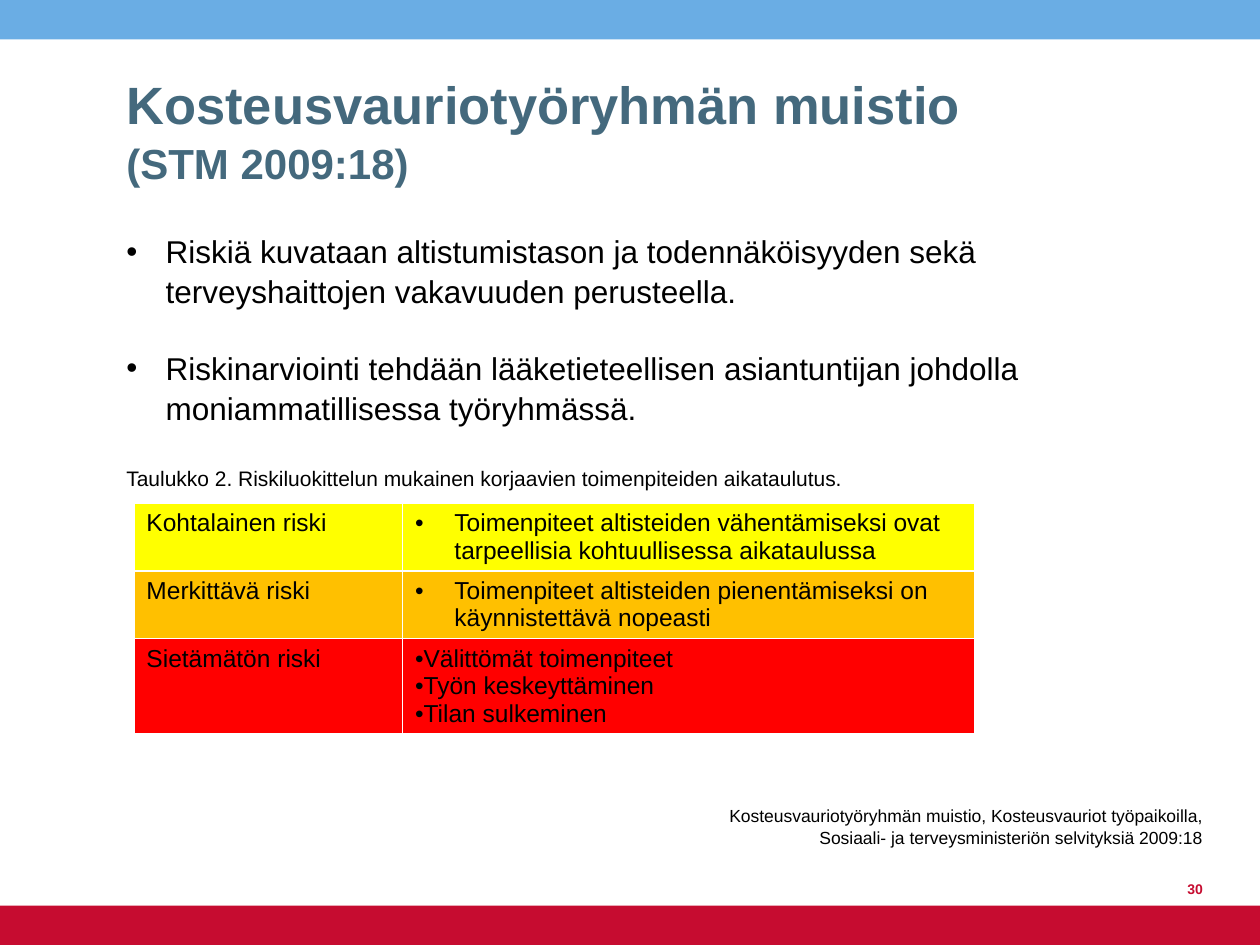
from dataclasses import dataclass

from lxml.etree import SubElement
from pptx import Presentation
from pptx.dml.color import RGBColor
from pptx.enum.shapes import MSO_SHAPE
from pptx.enum.text import MSO_ANCHOR, MSO_AUTO_SIZE, PP_ALIGN
from pptx.oxml.ns import qn
from pptx.util import Pt

COLORS = {
    "sky": "6AADE4", "crimson": "C60C30", "slate": "44697D", "black": "000000",
    "yellow": "FFFF00", "orange": "FFC000", "red": "FF0000",
}
WIDTH, HEIGHT, BAR = 720, 540, 22.5
HANG = 22.5
LINE = 1.05


@dataclass
class Risk:
    name: str
    actions: list[str]
    color: str
    height: float
    margin: float


RISKS = [
    Risk("Kohtalainen riski",
         ["Toimenpiteet altisteiden vähentämiseksi ovat tarpeellisia kohtuullisessa aikataulussa"],
         "yellow", 38.5, HANG),
    Risk("Merkittävä riski",
         ["Toimenpiteet altisteiden pienentämiseksi on käynnistettävä nopeasti"],
         "orange", 38.5, HANG),
    Risk("Sietämätön riski",
         ["Välittömät toimenpiteet", "Työn keskeyttäminen", "Tilan sulkeminen"],
         "red", 54, 0),
]


def rgb(name: str) -> RGBColor:
    return RGBColor.from_string(COLORS[name])


def add_text(tf, text: str, *, size: float, color: str = "black", bold: bool = False,
             align=PP_ALIGN.LEFT, before: float = 0, line: float = LINE,
             margin: float = 0, bullet: bool = False):
    """Fill the empty first paragraph of the frame, or append a new one."""
    p = tf.paragraphs[0] if not tf.text else tf.add_paragraph()
    p.alignment, p.line_spacing = align, line
    p.space_before, p.space_after = Pt(before), Pt(0)
    pPr = p._p.get_or_add_pPr()
    pPr.set("marL", str(Pt(margin)))
    pPr.set("indent", str(Pt(-HANG if bullet else 0)))
    if bullet:
        SubElement(pPr, qn("a:buFont")).set("typeface", "Arial")
        SubElement(pPr, qn("a:buChar")).set("char", "•")
    else:
        SubElement(pPr, qn("a:buNone"))
    add_run(p, text, size=size, color=color, bold=bold)
    return p


def add_run(p, text: str, *, size: float, color: str, bold: bool) -> None:
    r = p.add_run()
    r.text = text
    r.font.name, r.font.size, r.font.bold = "Arial", Pt(size), bold
    r.font.color.rgb = rgb(color)


def set_frame(sp, box: tuple, anchor):
    """Place a text shape and return its prepared text frame."""
    sp.left, sp.top, sp.width, sp.height = map(Pt, box)
    tf = sp.text_frame
    tf.word_wrap, tf.auto_size, tf.vertical_anchor = True, MSO_AUTO_SIZE.NONE, anchor
    return tf


def add_bar(s, top: float, color: str) -> None:
    sp = s.shapes.add_shape(MSO_SHAPE.RECTANGLE, 0, Pt(top), Pt(WIDTH), Pt(BAR))
    sp.shadow.inherit = False
    sp.fill.solid()
    sp.fill.fore_color.rgb = rgb(color)
    sp.line.fill.background()


def add_right_note(s, box: tuple, text: str, **fmt) -> None:
    tf = set_frame(s.shapes.add_textbox(0, 0, 0, 0), box, MSO_ANCHOR.BOTTOM)
    add_text(tf, text, align=PP_ALIGN.RIGHT, **fmt)


def add_risk_table(s, left: float, top: float, widths: tuple) -> None:
    total = sum(risk.height for risk in RISKS)
    table = s.shapes.add_table(len(RISKS), len(widths), Pt(left), Pt(top),
                               Pt(sum(widths)), Pt(total)).table
    table.horz_banding = False
    for column, width in zip(table.columns, widths):
        column.width = Pt(width)
    for row, risk in zip(table.rows, RISKS):
        row.height = Pt(risk.height)
        for cell in row.cells:
            cell.fill.solid()
            cell.fill.fore_color.rgb = rgb(risk.color)
        add_text(row.cells[0].text_frame, risk.name, size=14, line=1)
        for action in risk.actions:
            add_text(row.cells[1].text_frame, action, size=14, line=1,
                     margin=risk.margin, bullet=True)


def main() -> None:
    prs = Presentation()
    prs.slide_width, prs.slide_height = Pt(WIDTH), Pt(HEIGHT)
    s = prs.slides.add_slide(prs.slide_layouts[1])
    title, body = s.placeholders

    add_bar(s, 0, "sky")
    add_bar(s, HEIGHT - BAR, "crimson")

    tf = set_frame(title, (65, 26, 590, 85), MSO_ANCHOR.BOTTOM)
    p = add_text(tf, "Kosteusvauriotyöryhmän muistio", size=30, color="slate", bold=True)
    p.add_line_break()
    add_run(p, "(STM 2009:18)", size=24, color="slate", bold=True)

    tf = set_frame(body, (65, 128, 590, 317.5), MSO_ANCHOR.TOP)
    add_text(tf, "Riskiä kuvataan altistumistason ja todennäköisyyden sekä "
             "terveyshaittojen vakavuuden perusteella.", size=18, margin=HANG, bullet=True)
    add_text(tf, "Riskinarviointi tehdään lääketieteellisen asiantuntijan johdolla "
             "moniammatillisessa työryhmässä.", size=18, margin=HANG, bullet=True, before=21.5)
    add_text(tf, "Taulukko 2. Riskiluokittelun mukainen korjaavien toimenpiteiden "
             "aikataulutus.", size=12, before=21.5)

    add_risk_table(s, 76.5, 287.5, (153.5, 327))
    add_right_note(s, (399.5, 459.5, 294.5, 28.5),
                   "Kosteusvauriotyöryhmän muistio, Kosteusvauriot työpaikoilla, "
                   "Sosiaali- ja terveysministeriön selvityksiä 2009:18", size=10)
    add_right_note(s, (655, 488, 39.5, 28.5), "30", size=8, color="crimson", bold=True)
    prs.save("out.pptx")


if __name__ == "__main__":
    main()
